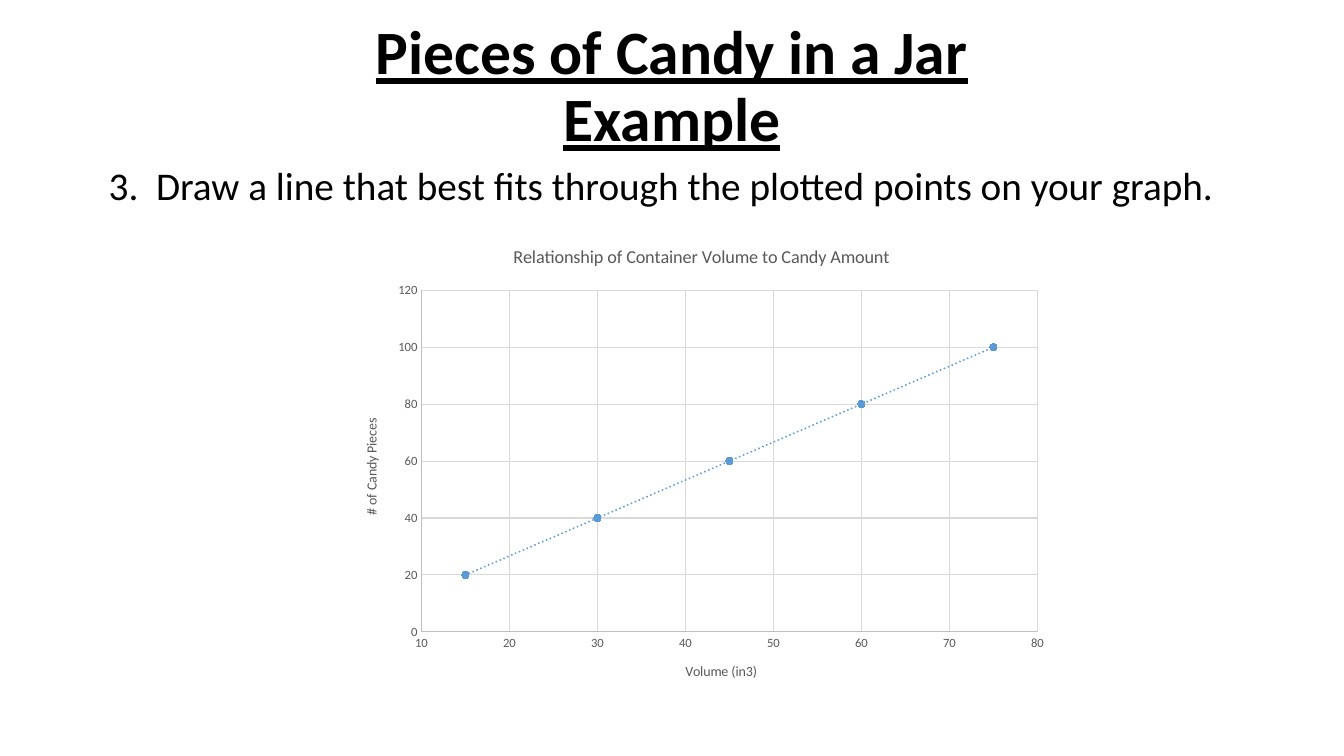
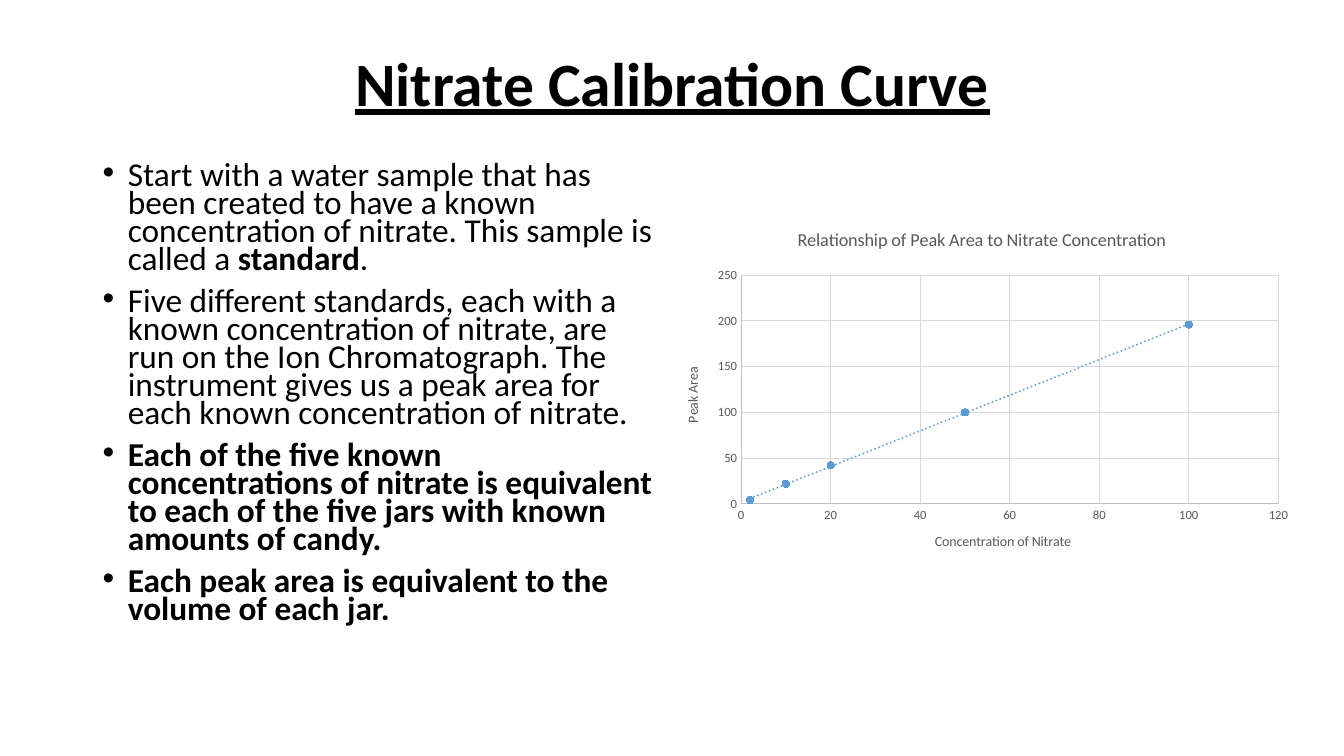
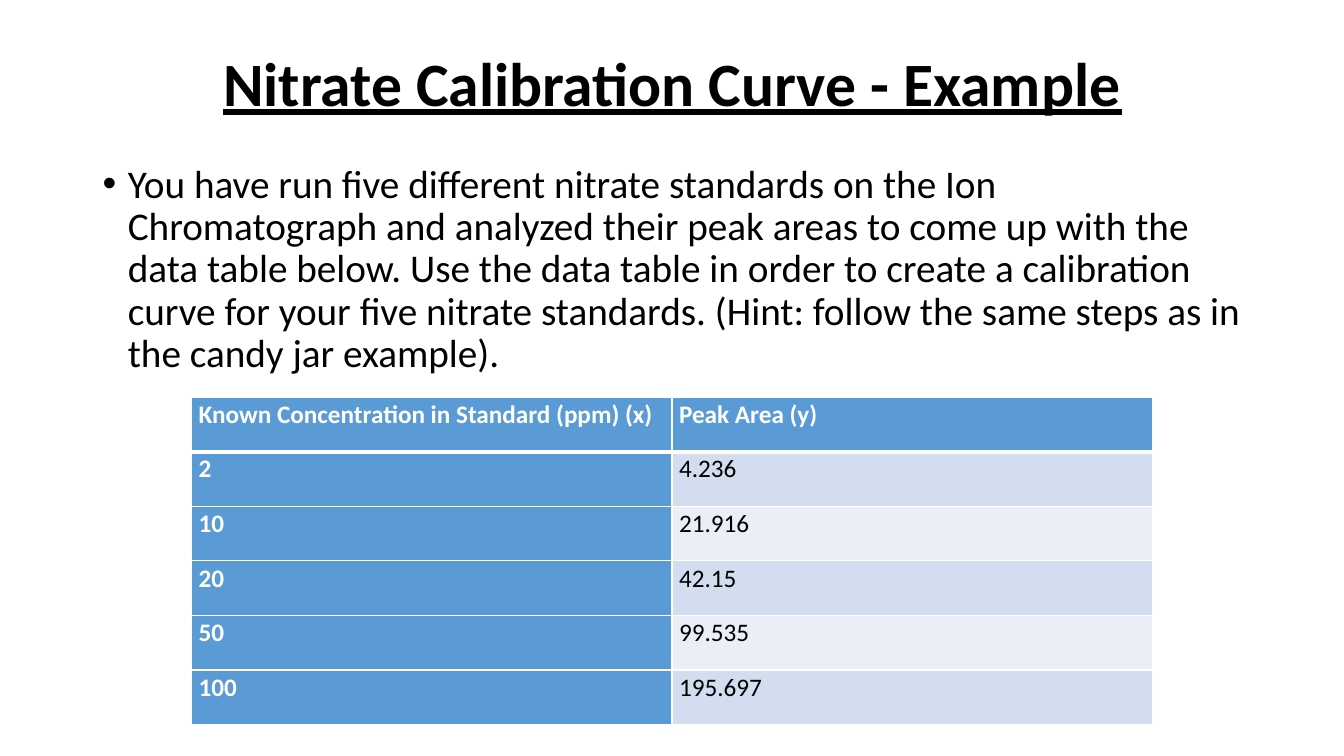
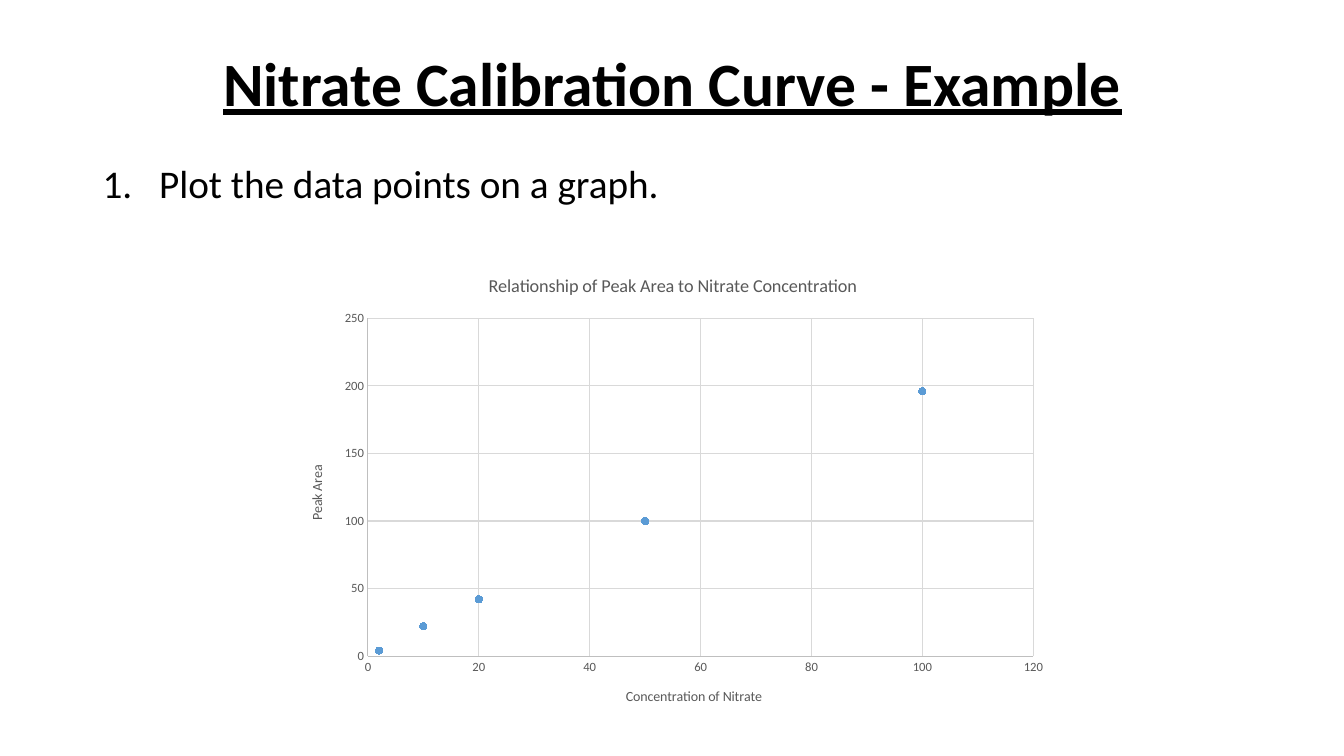
"""Builds four slides on calibration curves."""
import dataclasses

import pptx
import pptx.chart.data
import pptx.dml.color
import pptx.enum.chart
import pptx.enum.text
import pptx.oxml
import pptx.oxml.ns
import pptx.util

Inches = pptx.util.Inches
Pt = pptx.util.Pt
qn = pptx.oxml.ns.qn
NS = pptx.oxml.ns.nsdecls


@dataclasses.dataclass(frozen=True)
class Theme:
    font: str = "Calibri"
    ink: str = "000000"
    white: str = "FFFFFF"
    blue: str = "5B9BD5"
    bands: tuple = ("D2DEEF", "EAEFF7")
    gray: str = "595959"
    line: str = "BFBFBF"
    grid: str = "D9D9D9"
    head: float = 44
    body: float = 28
    small: float = 23.8
    cell: float = 18
    name: float = 13
    axis: float = 10
    tick: float = 9


class Deck:
    def __init__(self, theme):
        self.theme = theme
        self.show = pptx.Presentation()
        self.show.slide_width = Inches(13.33)
        self.show.slide_height = Inches(7.5)
        self.slide = None

    def add(self):
        self.slide = self.show.slides.add_slide(self.show.slide_layouts[6])

    def tint(self, text):
        return pptx.dml.color.RGBColor.from_string(text)

    def style(self, font, size, color, bold=False):
        font.name = self.theme.font
        font.size = Pt(size)
        font.bold = bold
        font.color.rgb = self.tint(color)

    def put(self, para, text, size, color, bold=False):
        run = para.add_run()
        run.text = text
        self.style(run.font, size, color, bold)
        return run

    def frame(self, box):
        shape = self.slide.shapes.add_textbox(*map(Inches, box))
        shape.text_frame.word_wrap = True
        return shape.text_frame

    def title(self, text, box=(0.92, 0.13, 11.5, 1.45)):
        frame = self.frame(box)
        frame.vertical_anchor = pptx.enum.text.MSO_ANCHOR.MIDDLE
        para = frame.paragraphs[0]
        para.alignment = pptx.enum.text.PP_ALIGN.CENTER
        para.line_spacing = 0.9
        run = self.put(para, text, self.theme.head, self.theme.ink, True)
        run.font.underline = True

    def mark(self, para, indent, start):
        props = para._p.get_or_add_pPr()
        props.set("marL", str(Inches(indent)))
        props.set("indent", str(-Inches(indent)))
        if start:
            tags = [f'<a:buFont {NS("a")} typeface="{self.theme.font}"/>',
                    f'<a:buAutoNum {NS("a")} type="arabicPeriod" startAt="{start}"/>']
        else:
            tags = [f'<a:buFont {NS("a")} typeface="Arial"/>',
                    f'<a:buChar {NS("a")} char="•"/>']
        for tag in tags:
            props.append(pptx.oxml.parse_xml(tag))

    def body(self, items, box, size=None, space=0.9, indent=0.25, start=None):
        frame = self.frame(box)
        for i, runs in enumerate(items):
            para = frame.add_paragraph() if i else frame.paragraphs[0]
            para.line_spacing = space
            para.space_before = Pt(10)
            self.mark(para, indent, start)
            for text, bold in runs:
                self.put(para, text, size or self.theme.body, self.theme.ink, bold)

    def label(self, owner, text, size):
        frame = owner.text_frame
        self.put(frame.paragraphs[0], text, size, self.theme.gray)
        return frame

    def axis(self, axis, text, scale):
        theme = self.theme
        frame = self.label(axis.axis_title, text, theme.axis)
        axis.minimum_scale, axis.maximum_scale, axis.major_unit = scale
        axis.major_tick_mark = pptx.enum.chart.XL_TICK_MARK.NONE
        axis.minor_tick_mark = pptx.enum.chart.XL_TICK_MARK.NONE
        axis.has_major_gridlines = True
        self.style(axis.tick_labels.font, theme.tick, theme.gray)
        for part, color in ((axis, theme.line), (axis.major_gridlines, theme.grid)):
            part.format.line.color.rgb = self.tint(color)
            part.format.line.width = Pt(0.75)
        return frame

    def place(self, chart, wide, high):
        left, top, right, base = 0.78, 0.63, 0.22, 0.68
        spots = {"x": left / wide, "y": top / high,
                 "w": (wide - left - right) / wide,
                 "h": (high - top - base) / high}
        modes = "".join(f'<c:{key}Mode val="edge"/>' for key in "xy")
        sizes = "".join(f'<c:{key} val="{val:.4f}"/>' for key, val in spots.items())
        plot = chart._chartSpace.find(".//" + qn("c:plotArea"))
        for old in plot.findall(qn("c:layout")):
            plot.remove(old)
        plot.insert(0, pptx.oxml.parse_xml(
            f'<c:layout {NS("c")}><c:manualLayout><c:layoutTarget val="inner"/>'
            f'{modes}{sizes}</c:manualLayout></c:layout>'))

    def trend(self, row):
        row._element.find(qn("c:xVal")).addprevious(pptx.oxml.parse_xml(
            f'<c:trendline {NS("c", "a")}><c:spPr><a:ln w="{Pt(1.5)}" cap="rnd">'
            f'<a:solidFill><a:srgbClr val="{self.theme.blue}"/></a:solidFill>'
            '<a:prstDash val="sysDot"/></a:ln></c:spPr>'
            '<c:trendlineType val="linear"/><c:dispRSqr val="0"/>'
            '<c:dispEq val="0"/></c:trendline>'))

    def chart(self, box, plan, fit=False):
        theme = self.theme
        data = pptx.chart.data.XyChartData()
        row = data.add_series("Series 1")
        for x, y in plan["points"]:
            row.add_data_point(x, y)
        chart = self.slide.shapes.add_chart(
            pptx.enum.chart.XL_CHART_TYPE.XY_SCATTER, *map(Inches, box), data).chart
        self.style(chart.font, theme.axis, theme.ink)
        chart.has_legend = False
        chart.has_title = True
        self.label(chart.chart_title, plan["name"], theme.name)
        self.axis(chart.category_axis, *plan["x"])
        side = self.axis(chart.value_axis, *plan["y"])
        side._txBody.bodyPr.set("rot", "-5400000")
        side._txBody.bodyPr.set("vert", "horz")
        plot = chart.plots[0]
        plot.vary_by_categories = False
        row = plot.series[0]
        row.smooth = False
        row.format.line.fill.background()
        row.marker.style = pptx.enum.chart.XL_MARKER_STYLE.CIRCLE
        row.marker.size = 5
        row.marker.format.fill.solid()
        row.marker.format.fill.fore_color.rgb = self.tint(theme.blue)
        row.marker.format.line.color.rgb = self.tint(theme.blue)
        if fit:
            self.trend(row)
        self.place(chart, box[2], box[3])

    def edge(self, cell, top, base):
        props = cell._tc.get_or_add_tcPr()
        for i, (side, width) in enumerate(zip("LRTB", (1, 1, top, base))):
            props.insert(i, pptx.oxml.parse_xml(
                f'<a:ln{side} {NS("a")} w="{Pt(width)}"><a:solidFill>'
                f'<a:srgbClr val="{self.theme.white}"/></a:solidFill></a:ln{side}>'))

    def table(self, rows, box):
        theme = self.theme
        grid = self.slide.shapes.add_table(
            len(rows), len(rows[0]), *map(Inches, box)).table
        for r, row in enumerate(rows):
            for c, text in enumerate(row):
                cell = grid.cell(r, c)
                key = r == 0 or c == 0
                cell.margin_left = cell.margin_right = Inches(0.07)
                cell.margin_top = cell.margin_bottom = 0
                cell.fill.solid()
                cell.fill.fore_color.rgb = self.tint(
                    theme.blue if key else theme.bands[(r - 1) % 2])
                para = cell.text_frame.paragraphs[0]
                para.line_spacing = 1.07
                self.put(para, text, theme.cell,
                         theme.white if key else theme.ink, key)
                self.edge(cell, 3 if r == 1 else 1, 3 if r == 0 else 1)


CANDY = {
    "name": "Relationship of Container Volume to Candy Amount",
    "x": ("Volume (in3)", (10, 80, 10)),
    "y": ("# of Candy Pieces", (0, 120, 20)),
    "points": [(15, 20), (30, 40), (45, 60), (60, 80), (75, 100)],
}
PEAK = {
    "name": "Relationship of Peak Area to Nitrate Concentration",
    "x": ("Concentration of Nitrate", (0, 120, 20)),
    "y": ("Peak Area", (0, 250, 50)),
    "points": [(2, 4), (10, 22), (20, 42), (50, 100), (100, 196)],
}
STEPS = [
    [("Start with a water sample that has been created to have a known "
      "concentration of nitrate. This sample is called a ", False),
     ("standard", True), (".", False)],
    [("Five different standards, each with a known concentration of nitrate, "
      "are run on the Ion Chromatograph. The instrument gives us a peak area "
      "for each known concentration of nitrate.", False)],
    [("Each of the five known concentrations of nitrate is equivalent to each "
      "of the five jars with known amounts of candy.", True)],
    [("Each peak area is equivalent to the volume of each jar.", True)],
]
TASK = ("You have run five different nitrate standards on the Ion Chromatograph "
        "and analyzed their peak areas to come up with the data table below. Use "
        "the data table in order to create a calibration curve for your five "
        "nitrate standards. (Hint: follow the same steps as in the candy jar "
        "example).")
ROWS = [
    ("Known Concentration in Standard (ppm) (x)", "Peak Area (y)"),
    ("2", "4.236"),
    ("10", "21.916"),
    ("20", "42.15"),
    ("50", "99.535"),
    ("100", "195.697"),
]


def main():
    deck = Deck(Theme())
    wide = (0.92, 1.58, 11.5, 2.33)

    deck.add()
    deck.title("Pieces of Candy in a Jar Example", (2.68, 0.15, 7.97, 1.45))
    deck.body([[("Draw a line that best fits through the plotted points on your "
                 "graph.", False)]], (0.98, 1.6, 11.94, 1.06), indent=0.47, start=3)
    deck.chart((3.4, 2.25, 7.11, 4.7), CANDY, fit=True)

    deck.add()
    deck.title("Nitrate Calibration Curve")
    deck.body(STEPS, (0.92, 1.58, 5.66, 5.18), deck.theme.small, 0.7)
    deck.chart((6.57, 2.1, 6.33, 3.58), PEAK, fit=True)

    deck.add()
    deck.title("Nitrate Calibration Curve - Example")
    deck.body([[(TASK, False)]], wide)
    deck.table(ROWS, (1.9, 3.94, 9.53, 3.25))

    deck.add()
    deck.title("Nitrate Calibration Curve - Example")
    deck.body([[("Plot the data points on a graph.", False)]], wide,
              indent=0.56, start=1)
    deck.chart((2.87, 2.53, 7.6, 4.66), PEAK)

    deck.show.save("out.pptx")


if __name__ == "__main__":
    main()
